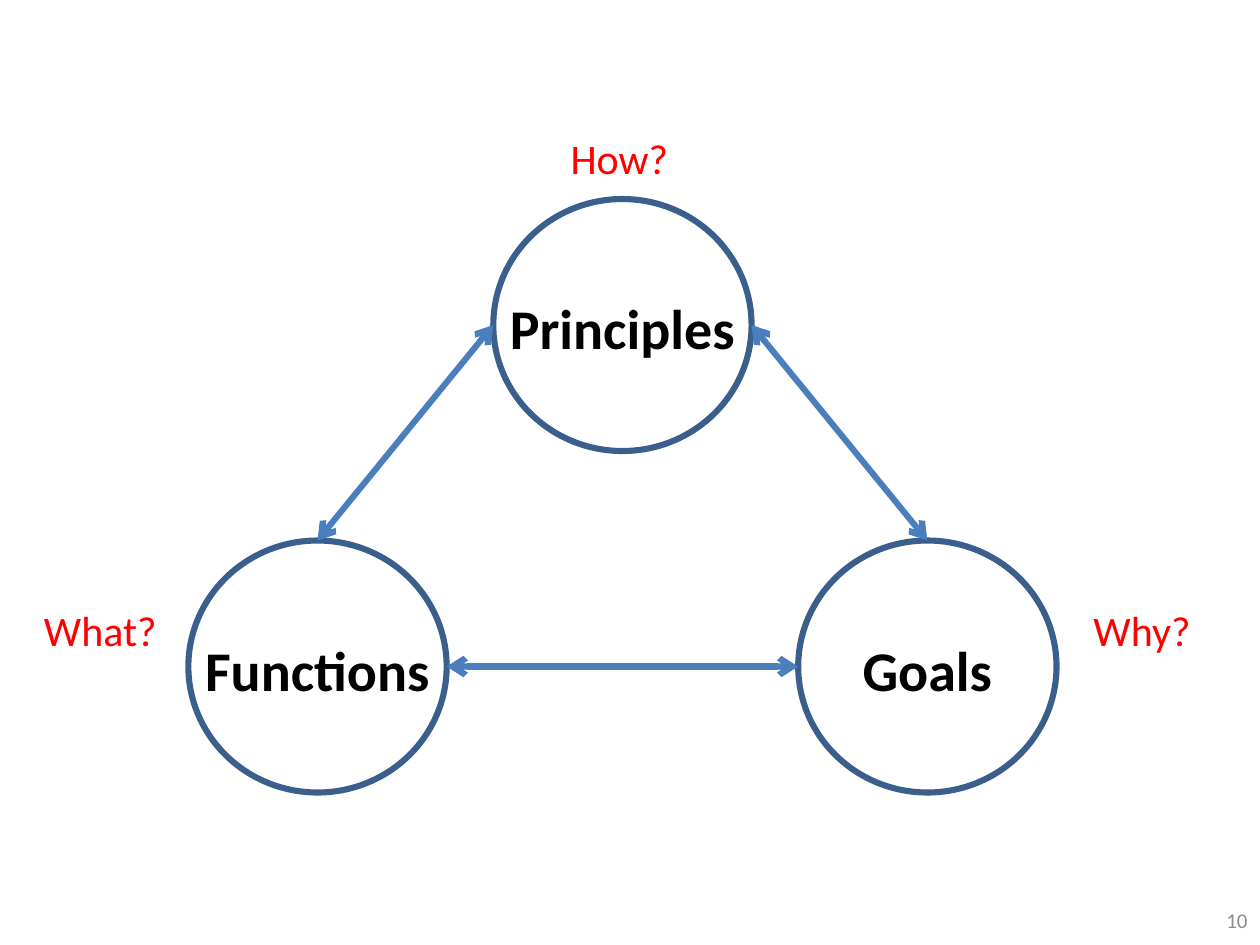
from dataclasses import dataclass

from lxml import etree
from pptx import Presentation
from pptx import util as u
from pptx.dml.color import RGBColor
from pptx.enum import shapes, text
from pptx.oxml import ns


@dataclass(frozen=True)
class Theme:
    font: str = "Calibri"
    ring: str = "3A5F8C"
    arrow: str = "4B7EBC"
    label: str = "000000"
    question: str = "FF0000"
    number: str = "8C8C8C"
    label_size: int = 32
    question_size: int = 24
    number_size: int = 12
    line_width: float = 3.5


THEME = Theme()
RING_W, RING_H = 2.05, 2.0
CENTRES = {
    "Goals": (7.36, 5.29),
    "Principles": (4.94, 2.58),
    "Functions": (2.52, 5.29),
}
LABEL_WIDTHS = {"Goals": 1.24, "Principles": 2, "Functions": 2}
LABEL_H = 0.94
QUESTIONS = [
    ("Why?", 8.58, 4.75, 0.98),
    ("What?", 0.25, 4.75, 1.11),
    ("How?", 4.43, 1, 0.98),
]


def set_line(line, color):
    line.color.rgb = RGBColor.from_string(color)
    line.width = u.Pt(THEME.line_width)


def add_ring(s, centre):
    x, y = centre
    sp = s.shapes.add_shape(
        shapes.MSO_SHAPE.OVAL,
        u.Inches(x - RING_W / 2), u.Inches(y - RING_H / 2),
        u.Inches(RING_W), u.Inches(RING_H),
    )
    sp.shadow.inherit = False
    sp.fill.background()
    set_line(sp.line, THEME.ring)


def add_double_arrow(s, start, end):
    cxn = s.shapes.add_connector(
        shapes.MSO_CONNECTOR.STRAIGHT, *(u.Inches(v) for v in start + end)
    )
    set_line(cxn.line, THEME.arrow)
    ln = cxn.line._get_or_add_ln()
    for tag in ("a:headEnd", "a:tailEnd"):
        etree.SubElement(ln, ns.qn(tag), type="arrow")
    etree.SubElement(cxn._element.spPr, ns.qn("a:effectLst"))


def add_text(s, box, words, size, color, align=text.PP_ALIGN.LEFT, bold=False):
    sp = s.shapes.add_textbox(*(u.Inches(v) for v in box))
    tf = sp.text_frame
    tf.word_wrap = False
    tf.auto_size = text.MSO_AUTO_SIZE.SHAPE_TO_FIT_TEXT
    p = tf.paragraphs[0]
    p.alignment = align
    r = p.add_run()
    r.text = words
    r.font.name = THEME.font
    r.font.size = u.Pt(size)
    r.font.bold = bold
    r.font.color.rgb = RGBColor.from_string(color)
    return tf


def add_label(s, words, centre):
    x, y = centre
    width = LABEL_WIDTHS[words]
    box = (x - width / 2, y - LABEL_H / 2, width, LABEL_H)
    tf = add_text(s, box, words, THEME.label_size, THEME.label,
                  text.PP_ALIGN.CENTER, True)
    tf.margin_top = tf.margin_bottom = u.Inches(0.2)
    tf.paragraphs[0].line_spacing = u.Pt(40)


def add_page_number(s, number):
    tf = add_text(s, (7.67, 7.1, 2.33, 0.4), number, THEME.number_size,
                  THEME.number, text.PP_ALIGN.RIGHT)
    tf.word_wrap = True
    tf.auto_size = text.MSO_AUTO_SIZE.NONE
    tf.vertical_anchor = text.MSO_ANCHOR.MIDDLE


def ring_point(name, dx, dy):
    x, y = CENTRES[name]
    return x + dx * RING_W / 2, y + dy * RING_H / 2


def main():
    prs = Presentation()
    prs.slide_width, prs.slide_height = u.Inches(10), u.Inches(7.5)
    s = prs.slides.add_slide(prs.slide_layouts[6])

    add_page_number(s, "10")
    for centre in CENTRES.values():
        add_ring(s, centre)
    add_double_arrow(s, ring_point("Functions", 1, 0), ring_point("Goals", -1, 0))
    add_double_arrow(s, ring_point("Principles", -1, 0), ring_point("Functions", 0, -1))
    add_double_arrow(s, ring_point("Principles", 1, 0), ring_point("Goals", 0, -1))
    for name, centre in CENTRES.items():
        add_label(s, name, centre)
    for words, x, y, width in QUESTIONS:
        add_text(s, (x, y, width, 0.5), words, THEME.question_size, THEME.question)

    prs.save("out.pptx")


if __name__ == "__main__":
    main()
